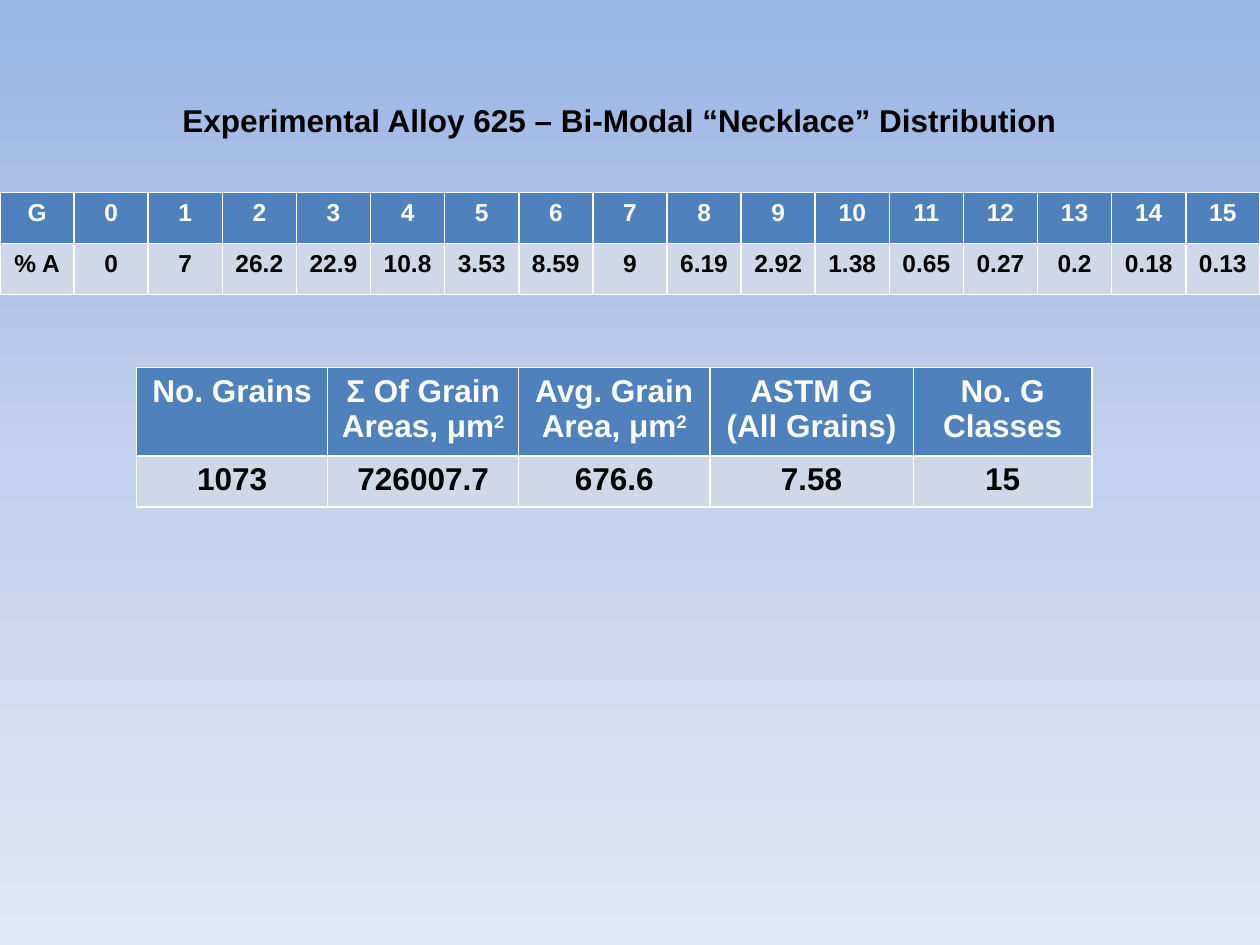
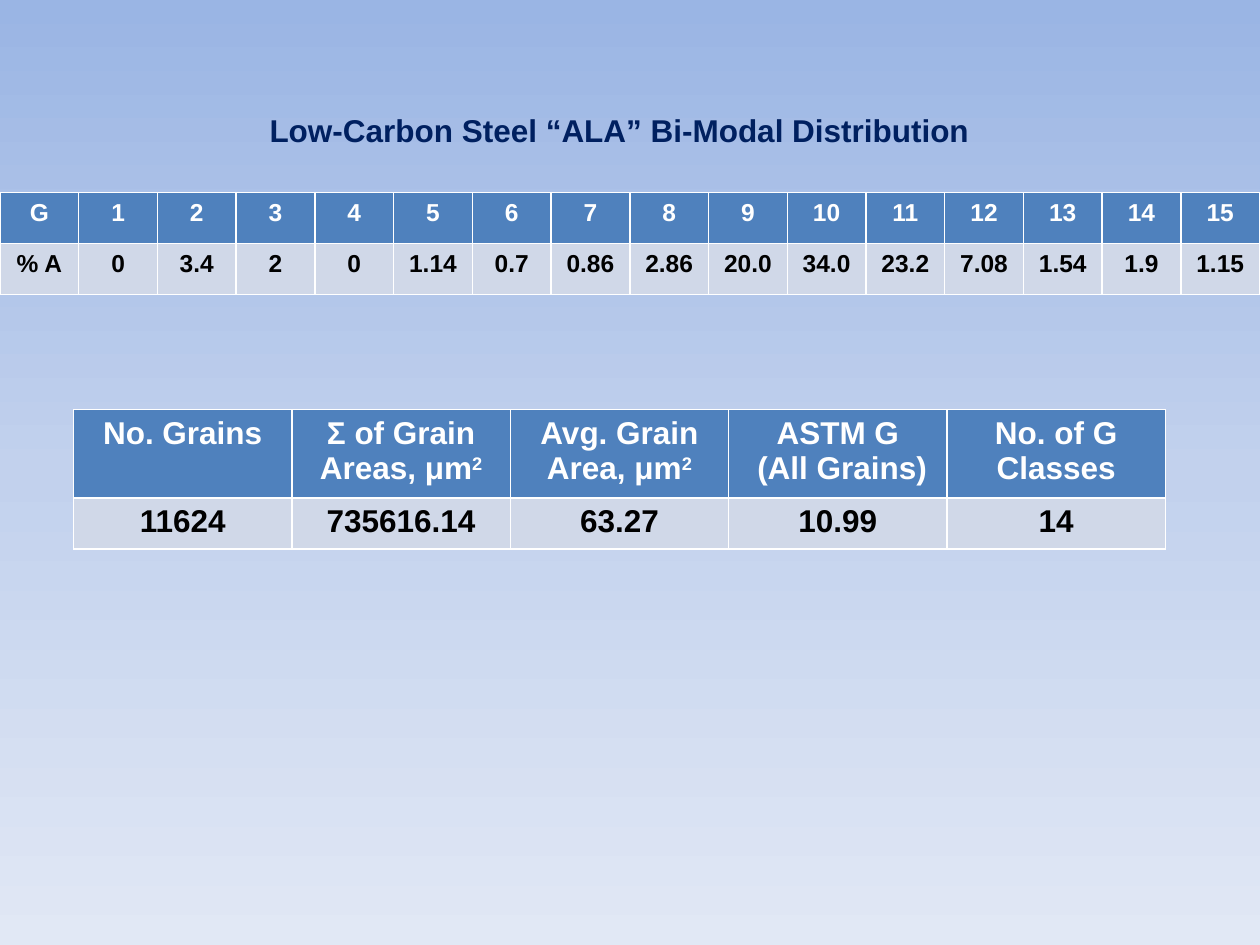
from copy import deepcopy
from dataclasses import dataclass

from lxml import etree
from pptx import Presentation
from pptx.dml.color import RGBColor
from pptx.enum.text import MSO_AUTO_SIZE, PP_ALIGN
from pptx.oxml.ns import qn
from pptx.slide import Slide
from pptx.table import _Cell
from pptx.util import Pt

CENTER = PP_ALIGN.CENTER
GROW = MSO_AUTO_SIZE.SHAPE_TO_FIT_TEXT

FONT = "Arial"
BLACK, WHITE, NAVY = "000000", "FFFFFF", "002060"
HEAD, BODY = "4F81BD", "D0D8E8"
SKY = [(0, "9AB5E4"), (0.5, "C2D1ED"), (1, "E1E8F5")]
WIDE, HIGH = 720, 540
ROW, TALL = 29.2, 50.6  # one-line and two-line table rows


@dataclass
class Title:
    text: str
    color: str
    left: float
    top: float
    width: float


@dataclass
class Grid:
    rows: list[list[str]]
    left: float
    top: float
    widths: list[float]
    size: float
    head: float  # height of the header row


@dataclass
class Page:
    title: Title
    grids: list[Grid]


def classes(first: int, areas: str) -> Grid:
    """Full-width table of area percentages by grain size class."""
    vals = areas.split()
    names = [str(first + i) for i in range(len(vals))]
    rows = [["G", *names], ["% A", *vals]]
    count = len(rows[0])
    return Grid(rows, 0, 110, [WIDE / count] * count, 14, ROW)


PAGES = [
    Page(
        Title("Experimental Alloy 625 – Bi-Modal “Necklace” Distribution",
              BLACK, 48, 54, 612),
        [
            classes(0, "0 7 26.2 22.9 10.8 3.53 8.59 9 6.19 2.92 1.38 "
                       "0.65 0.27 0.2 0.18 0.13"),
            Grid([["No. Grains", "Σ Of Grain Areas, μm^2",
                   "Avg. Grain Area, μm^2", "ASTM G (All Grains)",
                   "No. G Classes"],
                  ["1073", "726007.7", "676.6", "7.58", "15"]],
                 78, 210, [109.2, 109.2, 109.2, 116.4, 102], 18, TALL),
        ],
    ),
    Page(
        Title("Low-Carbon Steel “ALA” Bi-Modal Distribution",
              NAVY, 96, 60, 516),
        [
            classes(1, "0 3.4 2 0 1.14 0.7 0.86 2.86 20.0 34.0 23.2 "
                       "7.08 1.54 1.9 1.15"),
            Grid([["No. Grains", "Σ of Grain Areas, μm^2",
                   "Avg. Grain Area, μm^2", "ASTM G\n (All Grains)",
                   "No. of G Classes"],
                  ["11624", "735616.14", "63.27", "10.99", "14"]],
                 42, 234, [124.8] * 5, 18, TALL),
        ],
    ),
]


def rgb(code: str) -> RGBColor:
    return RGBColor.from_string(code)


def write(frame, text: str, size: float, color: str) -> None:
    """Fill a text frame; a caret starts a superscript, a newline a paragraph."""
    for i, line in enumerate(text.split("\n")):
        para = frame.add_paragraph() if i else frame.paragraphs[0]
        para.alignment = CENTER
        base, _, power = line.partition("^")
        for part in filter(None, (base, power)):
            run = para.add_run()
            run.text = part
            font = run.font
            font.name, font.size, font.bold = FONT, Pt(size), True
            font.color.rgb = rgb(color)
        if power:
            run._r.get_or_add_rPr().set("baseline", "30000")


def edge(cell: _Cell) -> None:
    """Draw a thin white line on all four sides."""
    props = cell._tc.get_or_add_tcPr()
    for i, side in enumerate("LRTB"):
        line = etree.Element(qn(f"a:ln{side}"), w=str(Pt(1)))
        fill = etree.SubElement(line, qn("a:solidFill"))
        etree.SubElement(fill, qn("a:srgbClr"), val=WHITE)
        props.insert(i, line)


def shade(slide: Slide) -> None:
    """Paint the three-stop sky gradient, top to bottom."""
    fill = slide.background.fill
    fill.gradient()
    fill.gradient_angle = 270
    stops = slide.element.find(f".//{qn('a:gsLst')}")
    stops.insert(1, deepcopy(stops[0]))
    for stop, (pos, color) in zip(fill.gradient_stops, SKY):
        stop.position = pos
        stop.color.rgb = rgb(color)


def add_title(slide: Slide, title: Title) -> None:
    box = slide.shapes.add_textbox(
        Pt(title.left), Pt(title.top), Pt(title.width), Pt(29))
    frame = box.text_frame
    frame.word_wrap = True
    frame.auto_size = GROW
    write(frame, title.text, 18, title.color)


def add_grid(slide: Slide, grid: Grid) -> None:
    table = slide.shapes.add_table(
        len(grid.rows), len(grid.widths), Pt(grid.left), Pt(grid.top),
        Pt(sum(grid.widths)), Pt(grid.head + ROW)).table
    table.horz_banding = False
    for col, width in zip(table.columns, grid.widths):
        col.width = Pt(width)
    looks = [(grid.head, HEAD, WHITE), (ROW, BODY, BLACK)]
    for row, texts, (height, back, ink) in zip(table.rows, grid.rows, looks):
        row.height = Pt(height)
        for cell, text in zip(row.cells, texts):
            cell.fill.solid()
            cell.fill.fore_color.rgb = rgb(back)
            edge(cell)
            write(cell.text_frame, text, grid.size, ink)


def main() -> None:
    deck = Presentation()
    deck.slide_width, deck.slide_height = Pt(WIDE), Pt(HIGH)
    for page in PAGES:
        slide = deck.slides.add_slide(deck.slide_layouts[6])
        shade(slide)
        add_title(slide, page.title)
        for grid in page.grids:
            add_grid(slide, grid)
    deck.save("out.pptx")


if __name__ == "__main__":
    main()
